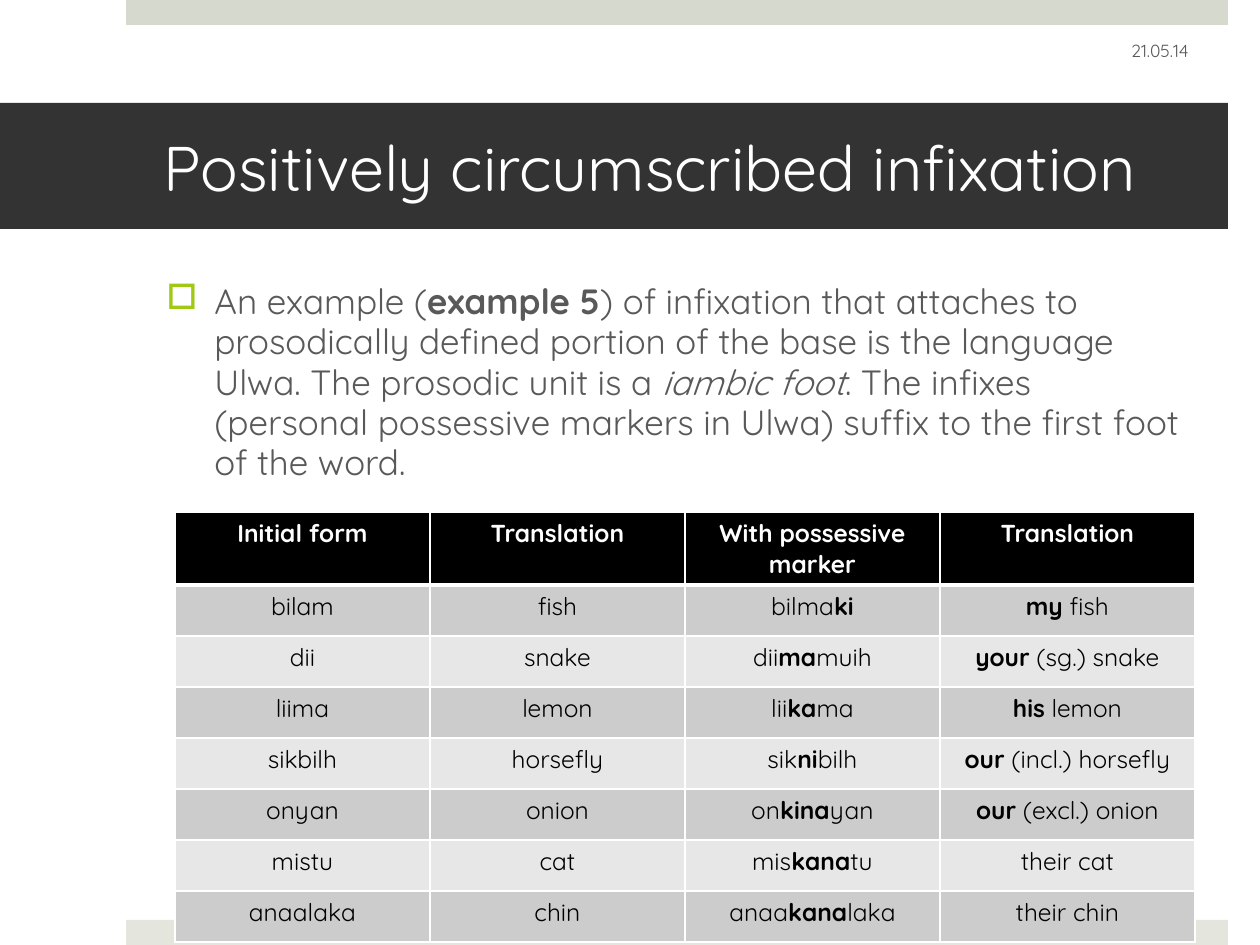
from lxml import etree
from pptx import Presentation
from pptx.dml.color import RGBColor
from pptx.enum.shapes import MSO_SHAPE
from pptx.enum.text import MSO_ANCHOR, PP_ALIGN
from pptx.oxml.ns import qn
from pptx.util import Emu, Pt

RECT = MSO_SHAPE.RECTANGLE
MIDDLE = MSO_ANCHOR.MIDDLE
LEFT, CENTER, RIGHT = PP_ALIGN.LEFT, PP_ALIGN.CENTER, PP_ALIGN.RIGHT

FONT = "Quicksand"
WHITE = RGBColor(0xFF, 0xFF, 0xFF)
BLACK = RGBColor(0x00, 0x00, 0x00)
TOP_BAR = RGBColor(0xD6, 0xD9, 0xCD)
BOTTOM_BAR = RGBColor(0xE4, 0xE6, 0xDE)
BANNER = RGBColor(0x33, 0x33, 0x33)
GREY = RGBColor(0x59, 0x59, 0x59)
GREEN = RGBColor(0xA2, 0xC8, 0x16)
BANDS = [RGBColor(0xCC, 0xCC, 0xCC), RGBColor(0xE7, 0xE7, 0xE7)]

TITLE = "Positively circumscribed infixation"
DATE = "21.05.14"
BODY = (
    "An example (*example 5*) of infixation that attaches to prosodically "
    "defined portion of the base is the language Ulwa. The prosodic unit is a "
    "_iambic foot_. The infixes (personal possessive markers in Ulwa) suffix "
    "to the first foot of the word."
)
HEADER = ["Initial form", "Translation", "With possessive marker", "Translation"]
WORDS = [
    ["bilam", "fish", "bilma*ki*", "*my* fish"],
    ["dii", "snake", "dii*ma*muih", "*your* (sg.) snake"],
    ["liima", "lemon", "lii*ka*ma", "*his* lemon"],
    ["sikbilh", "horsefly", "sik*ni*bilh", "*our* (incl.) horsefly"],
    ["onyan", "onion", "on*kina*yan", "*our* (excl.) onion"],
    ["mistu", "cat", "mis*kana*tu", "their cat"],
    ["anaalaka", "chin", "anaa*kana*laka", "their chin"],
]
TABLE_LEFT, TABLE_TOP, TABLE_WIDTH = 175, 512, 1020
HEADER_HEIGHT, ROW_HEIGHT = 73, 51


def px(n):
    return Emu(round(n * 914400 / 126))


def write(p, text, size, color, align=LEFT):
    p.alignment = align
    for i, strong in enumerate(text.split("*")):
        for j, part in enumerate(strong.split("_")):
            if part:
                r = p.add_run()
                r.text = part
                r.font.name = FONT
                r.font.size = Pt(size)
                r.font.color.rgb = color
                r.font.bold = i % 2 == 1
                r.font.italic = j % 2 == 1


def add_bar(slide, left, top, width, height, color):
    sp = slide.shapes.add_shape(RECT, px(left), px(top), px(width), px(height))
    sp.shadow.inherit = False
    sp.fill.solid()
    sp.fill.fore_color.rgb = color
    sp.line.fill.background()
    return sp


def add_text(slide, left, top, width, height):
    tf = slide.shapes.add_textbox(px(left), px(top), px(width), px(height)).text_frame
    tf.word_wrap = True
    return tf


def add_bullet(p, char, color, indent):
    pPr = p._p.get_or_add_pPr()
    pPr.set("marL", str(px(indent)))
    pPr.set("indent", str(-px(indent)))
    clr = etree.SubElement(pPr, qn("a:buClr"))
    etree.SubElement(clr, qn("a:srgbClr"), val=str(color))
    etree.SubElement(pPr, qn("a:buChar"), char=char)


def set_borders(cell, color, bottom):
    tcPr = cell._tc.get_or_add_tcPr()
    widths = [("a:lnL", 1), ("a:lnR", 1), ("a:lnT", 1), ("a:lnB", bottom)]
    for i, (tag, width) in enumerate(widths):
        ln = etree.Element(qn(tag), w=str(Pt(width)))
        fill = etree.SubElement(ln, qn("a:solidFill"))
        etree.SubElement(fill, qn("a:srgbClr"), val=str(color))
        tcPr.insert(i, ln)


def add_word_table(slide):
    rows = [[f"*{name}*" for name in HEADER]] + WORDS
    height = HEADER_HEIGHT + ROW_HEIGHT * len(WORDS)
    table = slide.shapes.add_table(
        len(rows), len(HEADER),
        px(TABLE_LEFT), px(TABLE_TOP), px(TABLE_WIDTH), px(height),
    ).table
    for i, row in enumerate(rows):
        is_header = i == 0
        table.rows[i].height = px(HEADER_HEIGHT if is_header else ROW_HEIGHT)
        for j, text in enumerate(row):
            cell = table.cell(i, j)
            cell.fill.solid()
            cell.fill.fore_color.rgb = BLACK if is_header else BANDS[(i - 1) % 2]
            set_borders(cell, WHITE, 3 if is_header else 1)
            p = cell.text_frame.paragraphs[0]
            write(p, text, 14, WHITE if is_header else BLACK, CENTER)


def main():
    prs = Presentation()
    prs.slide_width, prs.slide_height = px(1260), px(945)
    slide = prs.slides.add_slide(prs.slide_layouts[6])

    add_bar(slide, 126, 0, 1102, 25, TOP_BAR)
    add_bar(slide, 126, 920, 1102, 25, BOTTOM_BAR)

    tf = add_bar(slide, 0, 103, 1228, 126, BANNER).text_frame
    tf.word_wrap = True
    tf.vertical_anchor = MIDDLE
    tf.margin_left, tf.margin_right = px(164), px(38)
    write(tf.paragraphs[0], TITLE, 36, WHITE)

    p = add_text(slide, 154, 276, 1048, 588).paragraphs[0]
    p.space_before = Pt(20)
    p.line_spacing = 0.96
    add_bullet(p, "□", GREEN, 48)
    write(p, BODY, 20, GREY)

    tf = add_text(slide, 907, 26, 294, 50)
    tf.vertical_anchor = MIDDLE
    write(tf.paragraphs[0], DATE, 10, GREY, RIGHT)

    add_word_table(slide)
    prs.save("out.pptx")


if __name__ == "__main__":
    main()
